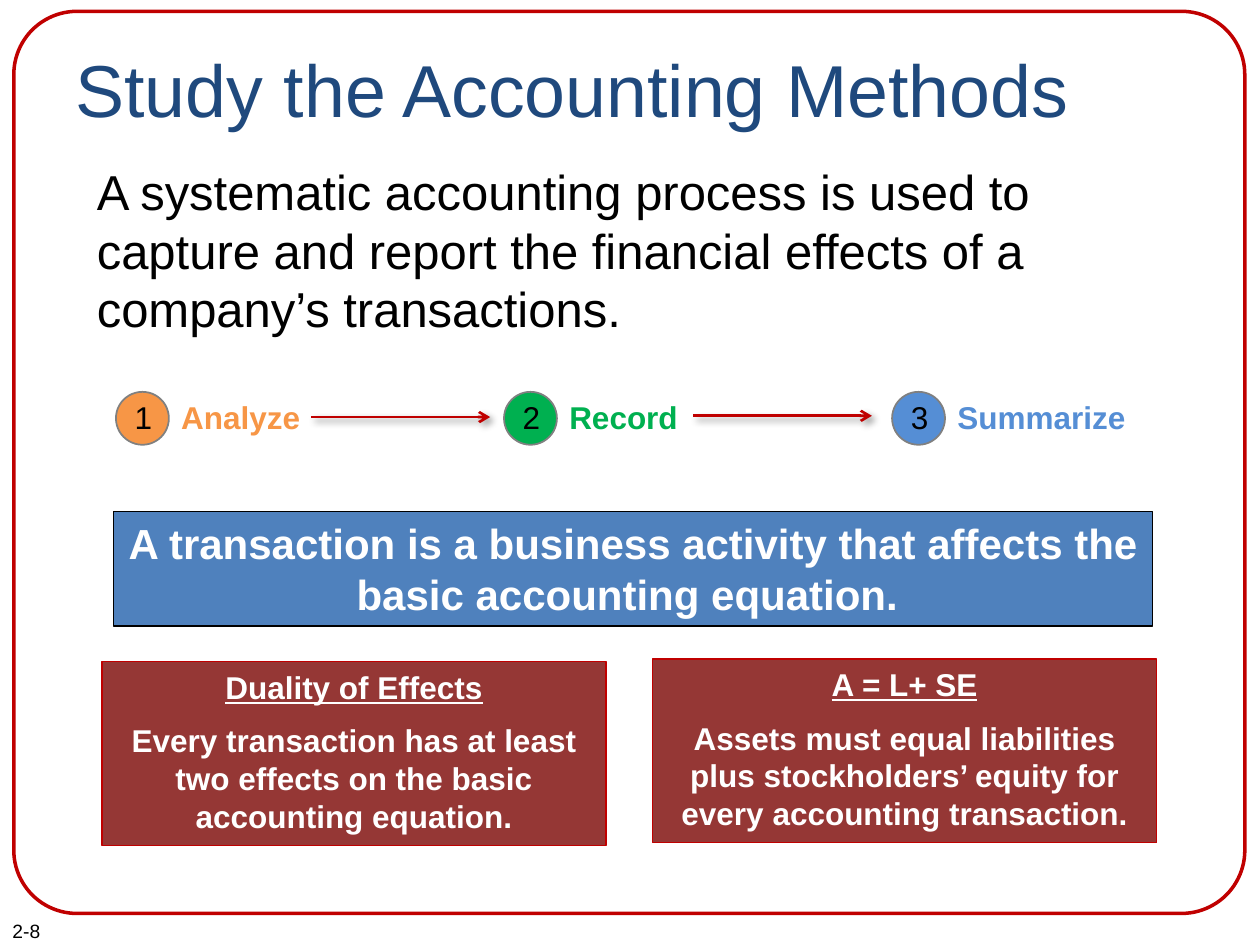
from dataclasses import dataclass

from lxml import etree
from pptx import Presentation
from pptx.dml.color import RGBColor
from pptx.enum.shapes import MSO_CONNECTOR as Connector, MSO_SHAPE as Shape
from pptx.enum.text import MSO_ANCHOR as Anchor, PP_ALIGN as Align
from pptx.oxml import parse_xml
from pptx.oxml.ns import nsdecls, qn
from pptx.util import Inches, Pt


@dataclass(frozen=True)
class Theme:
    font: str = "Arial"
    title: str = "1F497D"
    ink: str = "000000"
    white: str = "FFFFFF"
    red: str = "C00000"
    maroon: str = "953735"
    blue: str = "4F81BD"
    gray: str = "808080"
    steps: tuple = ("F79646", "00B050", "558ED5")
    title_size: float = 42
    body_size: float = 28
    banner_size: float = 24
    label_size: float = 18
    number_size: float = 11


THEME = Theme()


def write(para, text, size=THEME.label_size, color=THEME.ink, bold=False,
          underline=False, align=Align.LEFT, before=0):
    para.alignment = align
    para.space_before = Pt(before)
    span = para.add_run()
    span.text = text
    font = span.font
    font.name, font.size = THEME.font, Pt(size)
    font.bold, font.underline = bold, underline
    font.color.rgb = RGBColor.from_string(color)


class SlideBuilder:
    def __init__(self, deck, theme):
        self.theme = theme
        self.page = deck.slides.add_slide(deck.slide_layouts[5])

    def title(self, text, *place):
        box = self.page.shapes.title
        box.left, box.top, box.width, box.height = map(Inches, place)
        frame = box.text_frame
        frame.vertical_anchor = Anchor.TOP
        write(frame.paragraphs[0], text, self.theme.title_size, self.theme.title)

    def text(self, text, *place, wrap=True, **style):
        box = self.page.shapes.add_textbox(*map(Inches, place))
        box.text_frame.word_wrap = wrap
        write(box.text_frame.paragraphs[0], text, **style)

    def shape(self, kind, *place, fill=None, line, weight):
        shape = self.page.shapes.add_shape(kind, *map(Inches, place))
        shape.shadow.inherit = False
        if fill:
            shape.fill.solid()
            shape.fill.fore_color.rgb = RGBColor.from_string(fill)
        else:
            shape.fill.background()
        shape.line.color.rgb = RGBColor.from_string(line)
        shape.line.width = Pt(weight)
        return shape

    def panel(self, lines, *place, fill, line, size):
        """Filled box of centred bold lines; several lines make the first a heading."""
        frame = self.shape(Shape.RECTANGLE, *place, fill=fill, line=line,
                           weight=0.75).text_frame
        frame.word_wrap = True
        frame.vertical_anchor = Anchor.TOP
        for index, text in enumerate(lines):
            para = frame.add_paragraph() if index else frame.paragraphs[0]
            write(para, text, size, self.theme.white, bold=True,
                  underline=index == 0 and len(lines) > 1,
                  align=Align.CENTER, before=size / 2 if index else 0)

    def arrow(self, left, top, length):
        arrow = self.page.shapes.add_connector(
            Connector.STRAIGHT, *map(Inches, (left, top, left + length, top)))
        arrow.line.color.rgb = RGBColor.from_string(self.theme.red)
        arrow.line.width = Pt(1.5)
        etree.SubElement(arrow.line._get_or_add_ln(), qn("a:tailEnd"), type="arrow")
        # Soft shadow: 4 pt blur, 3 pt away at 45 degrees, 40 % black
        arrow._element.spPr.append(parse_xml(
            f'<a:effectLst {nsdecls("a")}><a:outerShdw blurRad="{Pt(4)}" '
            f'dist="{Pt(3)}" dir="2700000" rotWithShape="0">'
            f'<a:srgbClr val="{self.theme.ink}"><a:alpha val="40000"/></a:srgbClr>'
            '</a:outerShdw></a:effectLst>'))

    def step(self, number, label, left, top, color):
        size = 0.42
        self.shape(Shape.OVAL, left, top, size, size, fill=color,
                   line=self.theme.gray, weight=1)
        self.text(str(number), left + 0.05, top, size, 0.4)
        self.text(label, left + size, top, 1.67, 0.4, color=color, bold=True)


def main():
    deck = Presentation()
    deck.slide_width, deck.slide_height = Inches(10), Inches(7.5)
    slide = SlideBuilder(deck, THEME)

    # Frame and page number
    slide.text("2-8", 0, 7.25, 1.42, 0.29, size=THEME.number_size)
    frame = slide.shape(Shape.ROUNDED_RECTANGLE, 0.11, 0.09, 9.77, 7.16,
                        line=THEME.red, weight=2)
    frame.adjustments[0] = 0.07

    # Title and introduction
    slide.title("Study the Accounting Methods", 0.5, 0.3, 9, 1.25)
    slide.text("A systematic accounting process is used to capture and report "
               "the financial effects of a company’s transactions.",
               0.67, 1.23, 8.58, 1.51, size=THEME.body_size)

    # Three steps at equal pitch, joined by arrows
    labels = ("Analyze", "Record", "Summarize")
    for index, (label, color) in enumerate(zip(labels, THEME.steps)):
        slide.step(index + 1, label, 0.92 + 3.08 * index, 3.11, color)
    for left, top in ((2.47, 3.31), (5.5, 3.3)):
        slide.arrow(left, top, 1.42)

    # Definition banner
    slide.panel(["A transaction is a business activity that affects the basic "
                 "accounting equation. "], 0.9, 4.06, 8.25, 0.91,
                fill=THEME.blue, line=THEME.ink, size=THEME.banner_size)

    # Two principles
    principles = (
        (0.81, 5.25, "Duality of Effects",
         "Every transaction has at least two effects on the basic "
         "accounting equation."),
        (5.18, 5.23, "A = L+ SE",
         "Assets must equal liabilities plus stockholders’ equity for "
         "every accounting transaction."),
    )
    for left, top, heading, detail in principles:
        slide.panel([heading, detail], left, top, 4, 1.46, fill=THEME.maroon,
                    line=THEME.red, size=THEME.label_size)

    deck.save("out.pptx")


if __name__ == "__main__":
    main()
